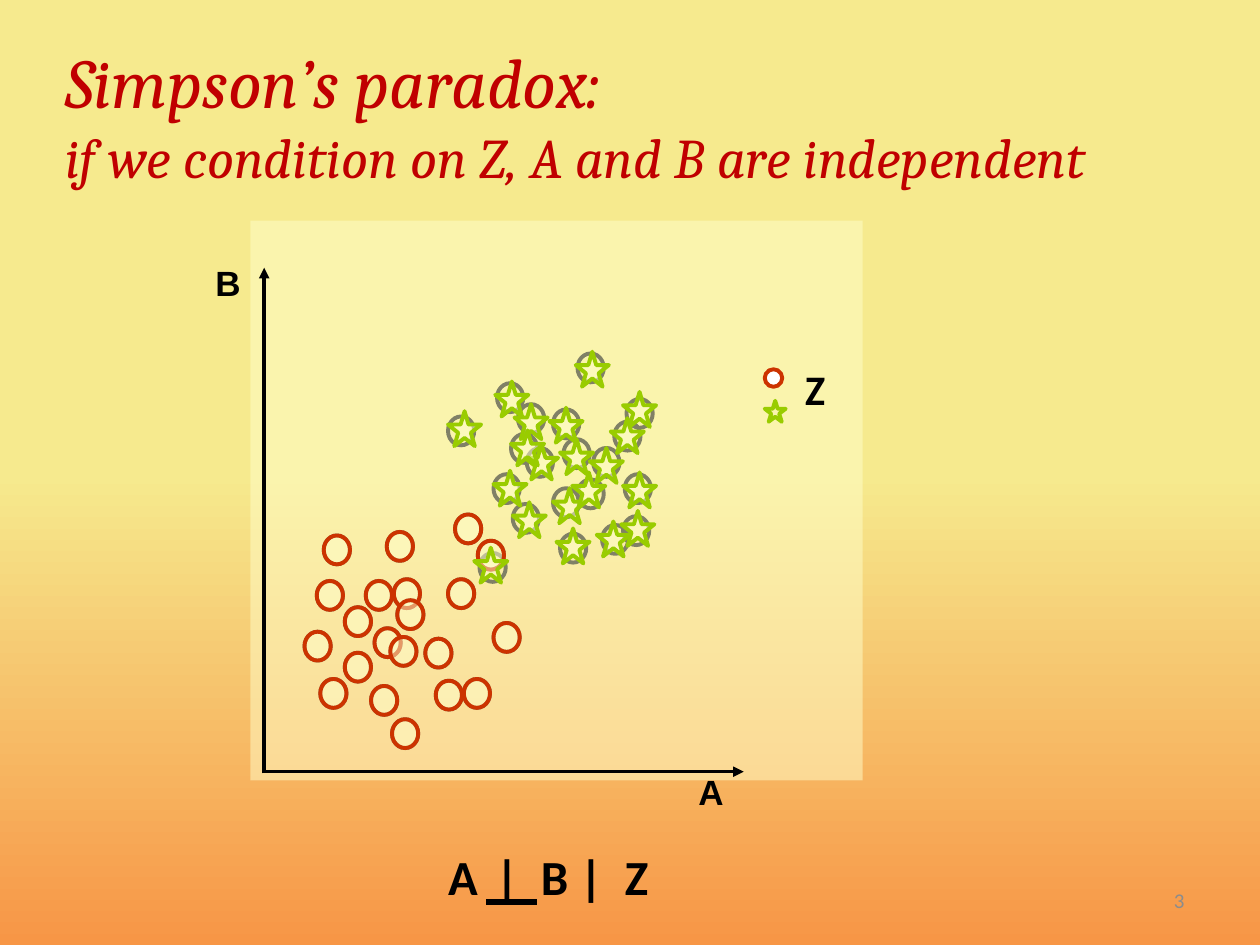
from copy import deepcopy

from lxml.etree import SubElement
from pptx import Presentation
from pptx.dml.color import RGBColor
from pptx.enum.shapes import MSO_CONNECTOR, MSO_SHAPE
from pptx.enum.text import MSO_ANCHOR, MSO_AUTO_SIZE, PP_ALIGN
from pptx.oxml.ns import qn
from pptx.util import Pt

BLACK = RGBColor(0, 0, 0)
WHITE = RGBColor(255, 255, 255)
GRAY = RGBColor(0x8C, 0x8C, 0x8C)
CRIMSON = RGBColor(0xC0, 0, 0)
RED = RGBColor(0xCC, 0x33, 0)
GREEN = RGBColor(0x99, 0xCC, 0)
CREAM = RGBColor(0xFF, 0xFF, 0xCC)
YELLOW = RGBColor(0xF6, 0xEA, 0x8E)
ORANGE = RGBColor(0xF7, 0x96, 0x46)

TITLE = [("Simpson’s paradox:", 40),
         ("if we condition on Z, A and B are independent", 32)]
FORMULA = "A\t|\tB |\tZ"
TABS = [27, 53, 101]

# Left and top of each mark
LOW = [(224, 411), (212, 392), (249, 389), (183, 388), (174, 361), (181, 332),
       (256, 331), (243, 365), (273, 309), (282, 356), (260, 294), (225, 331),
       (221, 304), (197, 347), (185, 306), (265, 388), (214, 359), (227, 343),
       (223, 364), (197, 373), (209, 332)]
# Ring and star of each point in the upper cluster
HIGH = [((274, 316), (271, 313)), ((320, 305), (318, 302)),
        ((293, 288), (293, 287)), ((282, 271), (282, 269)),
        ((256, 238), (256, 235)), ((284, 219), (283, 218)),
        ((330, 202), (329, 201)), ((358, 228), (356, 224)),
        ((344, 300), (341, 298)), ((356, 295), (355, 292)),
        ((296, 231), (294, 231)), ((301, 256), (300, 254)),
        ((292, 248), (292, 246)), ((316, 234), (314, 233)),
        ((322, 251), (320, 251)), ((351, 241), (349, 239)),
        ((316, 279), (316, 279)), ((330, 274), (327, 270)),
        ((357, 271), (356, 270)), ((339, 256), (337, 256))]
RING = (15, 16.5)
STAR = (19, 20)

deck = Presentation()
deck.slide_width, deck.slide_height = Pt(720), Pt(540)
slide = deck.slides.add_slide(deck.slide_layouts[5])
shapes = slide.shapes


def paint(slide):
    """Fill the background: yellow to the middle, then fading to orange."""
    fill = slide.background.fill
    fill.gradient()
    fill.gradient_angle = 270
    first, last = fill.gradient_stops
    first.color.rgb, first.position = YELLOW, 0
    last.color.rgb, last.position = ORANGE, 1
    stops = slide.background._cSld.find(".//" + qn("a:gsLst"))
    mid = deepcopy(stops[0])
    mid.set("pos", "50000")
    stops.insert(1, mid)


def write(par, text, size, font="Calibri", color=BLACK, bold=False,
          italic=False, align=PP_ALIGN.LEFT):
    par.alignment = align
    run = par.add_run()
    run.text = text
    face = run.font
    face.name, face.size, face.color.rgb = font, Pt(size), color
    face.bold, face.italic = bold, italic


def label(box, text, size, wrap=True, anchor=MSO_ANCHOR.TOP, **style):
    frame = shapes.add_textbox(*map(Pt, box)).text_frame
    frame.word_wrap, frame.vertical_anchor = wrap, anchor
    par = frame.paragraphs[0]
    write(par, text, size, **style)
    return par


def mark(kind, spot, size, line=None, fill=None, clear=False):
    """Add a preset shape; clear makes its fill half transparent."""
    shape = shapes.add_shape(kind, *map(Pt, spot + size))
    shape.shadow.inherit = False
    if fill is None:
        shape.fill.background()
    else:
        shape.fill.solid()
        shape.fill.fore_color.rgb = fill
    if clear:
        tint = shape.fill._xPr.find(".//" + qn("a:srgbClr"))
        SubElement(tint, qn("a:alpha"), val="50000")
    if line is None:
        shape.line.fill.background()
    else:
        shape.line.color.rgb, shape.line.width = line, Pt(2.25)


def rule(start, end, width, arrow=False):
    link = shapes.add_connector(MSO_CONNECTOR.STRAIGHT, *map(Pt, start + end))
    link.line.color.rgb, link.line.width = BLACK, Pt(width)
    if arrow:
        SubElement(link.line._get_or_add_ln(), qn("a:tailEnd"), type="triangle")
    SubElement(link._element.spPr, qn("a:effectLst"))


paint(slide)
title = shapes.title
title.left, title.top, title.width, title.height = map(Pt, (30, 18, 672, 94))
frame = title.text_frame
frame.word_wrap, frame.auto_size = True, MSO_AUTO_SIZE.NONE
frame.vertical_anchor = MSO_ANCHOR.MIDDLE
for n, (text, size) in enumerate(TITLE):
    par = frame.add_paragraph() if n else frame.paragraphs[0]
    write(par, text, size, font="Cambria", color=CRIMSON, italic=True)
label((516, 500, 168, 29), "3", 12, color=GRAY, align=PP_ALIGN.RIGHT,
      anchor=MSO_ANCHOR.MIDDLE)

# Black rings lie under the half-clear panel
for spot in LOW + [ring for ring, star in HIGH]:
    mark(MSO_SHAPE.OVAL, spot, RING, line=BLACK)
label((116, 146, 62, 31), "B", 20, font="Arial", bold=True)
label((392, 437, 62, 31), "A", 20, font="Arial", bold=True)
mark(MSO_SHAPE.RECTANGLE, (143, 126), (350, 320), fill=CREAM, clear=True)
for spot in LOW:
    mark(MSO_SHAPE.OVAL, spot, RING, line=RED, fill=CREAM, clear=True)
for ring, star in HIGH:
    mark(MSO_SHAPE.STAR_5_POINT, star, STAR, line=GREEN, fill=CREAM, clear=True)

rule((151, 441), (425, 441), 2, arrow=True)
rule((151, 442), (151, 153), 2, arrow=True)

# Legend
mark(MSO_SHAPE.OVAL, (437, 211), (10, 10), line=RED, fill=WHITE)
mark(MSO_SHAPE.STAR_5_POINT, (437, 229), (12, 12), line=GREEN)
label((453, 204, 26, 37), "Z", 24, wrap=False, bold=True)

# Formula, with a rule that turns its first bar into the independence sign
par = label((249, 480, 222, 41), FORMULA, 28, bold=True)
tabs = SubElement(par._p.get_or_add_pPr(), qn("a:tabLst"))
for stop in TABS:
    SubElement(tabs, qn("a:tab"), pos=str(Pt(stop)), algn="l")
rule((278, 515.5), (307, 515.5), 3)

deck.save("out.pptx")
